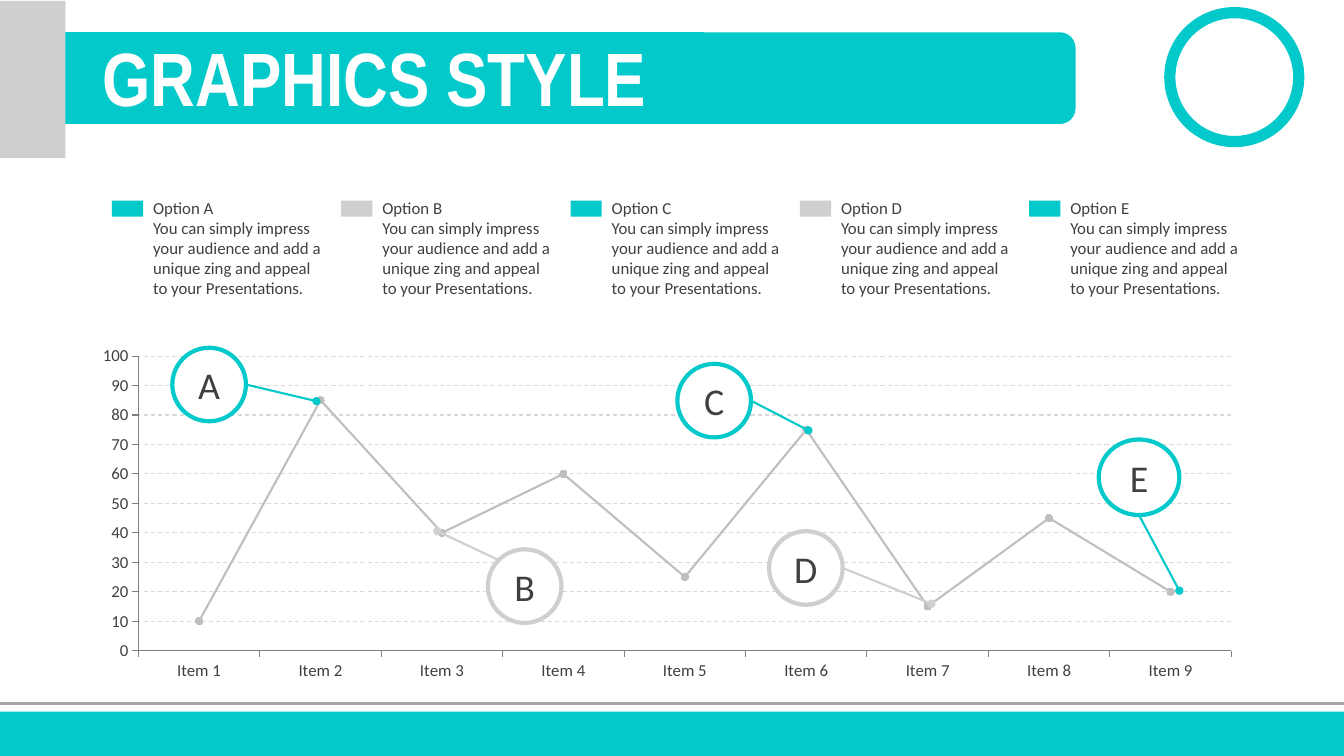
from math import cos, radians, sin

from lxml.etree import SubElement
from pptx import Presentation
from pptx.chart.data import CategoryChartData
from pptx.dml.color import RGBColor
from pptx.enum.chart import XL_CHART_TYPE as ChartType
from pptx.enum.chart import XL_MARKER_STYLE as Marker
from pptx.enum.chart import XL_TICK_MARK as Tick
from pptx.enum.dml import MSO_LINE_DASH_STYLE as Dash
from pptx.enum.shapes import MSO_CONNECTOR as Connector
from pptx.enum.shapes import MSO_SHAPE as Shape
from pptx.enum.text import MSO_ANCHOR as Anchor
from pptx.enum.text import PP_ALIGN as Align
from pptx.oxml import parse_xml
from pptx.oxml.ns import nsdecls, qn
from pptx.util import Inches, Pt

COLORS = {
    "teal": "03C9CA",
    "grey": "D0CECE",
    "rule": "A6A6A6",
    "series": "BFBFBF",
    "grid": "D9D9D9",
    "axis": "808080",
    "text": "404040",
    "white": "FFFFFF",
}
COLUMNS, ROWS = 160, 90
OPTION_TEXT = (
    "You can simply impress your audience and add a "
    "unique zing and appeal to your Presentations."
)
OPTIONS = [("A", "teal"), ("B", "grey"), ("C", "teal"), ("D", "grey"), ("E", "teal")]
CALLOUTS = [
    ("A", "teal", (20.52, 41.4, 8.76, 8.76), 0, (37.68, 47.76)),
    ("B", "grey", (58.08, 65.4, 8.76, 8.76), 225, (52.08, 63.24)),
    ("D", "grey", (91.56, 63.24, 8.76, 8.76), 0, (110.88, 71.88)),
    ("C", "teal", (80.64, 43.32, 8.76, 8.76), 0, (96.24, 51.24)),
    ("E", "teal", (130.8, 52.32, 9.6, 9), 90, (140.4, 70.32)),
]
VALUES = [10, 85, 40, 60, 25, 75, 15, 45, 20]


def color(name):
    return RGBColor.from_string(COLORS[name])


class SlideBuilder:
    def __init__(self, presentation):
        self.column = presentation.slide_width / COLUMNS
        self.row = presentation.slide_height / ROWS
        self.slide = presentation.slides.add_slide(presentation.slide_layouts[6])

    def place(self, *lengths):
        units = (self.column, self.row) * 2
        return [round(length * unit) for length, unit in zip(lengths, units)]

    def shape(self, kind, box, fill, outline=None):
        shape = self.slide.shapes.add_shape(kind, *self.place(*box))
        shape.shadow.inherit = False
        shape.fill.solid()
        shape.fill.fore_color.rgb = color(fill)
        if outline:
            shape.line.color.rgb = color(outline)
            shape.line.width = Pt(3)
        else:
            shape.line.fill.background()
        return shape

    def line(self, start, end, line_color, width, oval=False):
        ends = self.place(*start, *end)
        connector = self.slide.shapes.add_connector(Connector.STRAIGHT, *ends)
        connector.line.color.rgb = color(line_color)
        connector.line.width = Pt(width)
        if oval:
            SubElement(connector.line._get_or_add_ln(), qn("a:tailEnd"), type="oval")
        SubElement(connector._element.spPr, qn("a:effectLst"))

    def style_text(self, text_frame, size, text_color, font="Calibri", bold=False):
        for paragraph in text_frame.paragraphs:
            for run in paragraph.runs:
                run.font.name = font
                run.font.size = Pt(size)
                run.font.bold = bold
                run.font.color.rgb = color(text_color)

    def text(self, box, text, size, text_color, anchor=Anchor.TOP, **style):
        text_frame = self.slide.shapes.add_textbox(*self.place(*box)).text_frame
        text_frame.word_wrap = True
        text_frame.vertical_anchor = anchor
        text_frame.text = text
        self.style_text(text_frame, size, text_color, **style)

    def option(self, left, letter, fill):
        self.shape(Shape.RECTANGLE, (left, 23.88, 3.72, 1.92), fill)
        box = (left + 3.72, 22.92, 23.16, 15.72)
        self.text(box, f"Option {letter}\n{OPTION_TEXT}", 12, "text")

    def callout(self, letter, outline, box, angle, point):
        left, top, width, height = box
        circle = self.shape(Shape.OVAL, box, "white", outline)
        text_frame = circle.text_frame
        text_frame.text = letter
        text_frame.vertical_anchor = Anchor.MIDDLE
        text_frame.paragraphs[0].alignment = Align.CENTER
        self.style_text(text_frame, 27, "text")
        start = (
            left + width / 2 * (1 + cos(radians(angle))),
            top + height / 2 * (1 + sin(radians(angle))),
        )
        self.line(start, point, outline, 1.5, oval=True)

    def chart(self, box, values):
        data = CategoryChartData()
        data.categories = [f"Item {number}" for number in range(1, len(values) + 1)]
        data.add_series("Series 1", values)
        chart = self.slide.shapes.add_chart(
            ChartType.LINE_MARKERS, *self.place(*box), data
        ).chart
        chart.has_legend = False
        chart.has_title = False
        chart.font.name = "Calibri"
        chart.font.size = Pt(12)
        chart.font.color.rgb = color("text")

        for axis in (chart.category_axis, chart.value_axis):
            axis.major_tick_mark = Tick.OUTSIDE
            axis.minor_tick_mark = Tick.NONE
            axis.format.line.color.rgb = color("axis")
            axis.format.line.width = Pt(0.75)
        value_axis = chart.value_axis
        value_axis.minimum_scale = 0
        value_axis.maximum_scale = 100
        value_axis.major_unit = 10
        grid_line = value_axis.major_gridlines.format.line
        grid_line.color.rgb = color("grid")
        grid_line.width = Pt(0.75)
        grid_line.dash_style = Dash.DASH

        plot = chart.plots[0]
        plot.vary_by_categories = False
        series = plot.series[0]
        series.smooth = False
        series.format.line.color.rgb = color("series")
        series.format.line.width = Pt(1.5)
        series.marker.style = Marker.CIRCLE
        series.marker.size = 5
        series.marker.format.fill.solid()
        series.marker.format.fill.fore_color.rgb = color("series")
        series.marker.format.line.color.rgb = color("series")
        self.set_plot_area(chart, x=0.05, y=0.05, w=0.93, h=0.845)

    def set_plot_area(self, chart, **shares):
        plot_area = chart._chartSpace.chart.plotArea
        for layout in plot_area.findall(qn("c:layout")):
            plot_area.remove(layout)
        modes = "".join(f'<c:{side}Mode val="edge"/>' for side in "xy")
        sizes = "".join(f'<c:{side} val="{share}"/>' for side, share in shares.items())
        layout = parse_xml(
            f'<c:layout {nsdecls("c")}><c:manualLayout>'
            f'<c:layoutTarget val="inner"/>{modes}{sizes}'
            "</c:manualLayout></c:layout>"
        )
        plot_area.insert(0, layout)


def main():
    presentation = Presentation()
    presentation.slide_width = Inches(13.33)
    presentation.slide_height = Inches(7.5)
    builder = SlideBuilder(presentation)

    banner = builder.shape(Shape.ROUNDED_RECTANGLE, (4.8, 3.84, 123.24, 10.92), "teal")
    banner.adjustments[0] = 0.17
    builder.line((0, 83.76), (COLUMNS, 83.76), "rule", 2)
    builder.shape(Shape.RECTANGLE, (0, 84.72, COLUMNS, ROWS - 84.72), "teal")
    builder.shape(Shape.RECTANGLE, (0, 0.12, 7.8, 18.72), "grey")
    emblem = builder.shape(Shape.DONUT, (138.6, 0.84, 16.68, 16.68), "teal")
    emblem.adjustments[0] = 0.08

    builder.chart((9.48, 40.32, 139.92, 41.52), VALUES)
    for callout in CALLOUTS:
        builder.callout(*callout)
    for index, (letter, fill) in enumerate(OPTIONS):
        builder.option(13.32 + 27.3 * index, letter, fill)
    builder.text(
        (11.04, 3, 74.88, 12.12), "GRAPHICS STYLE", 54, "white",
        anchor=Anchor.MIDDLE, font="Arial Narrow", bold=True,
    )
    presentation.save("out.pptx")


if __name__ == "__main__":
    main()
